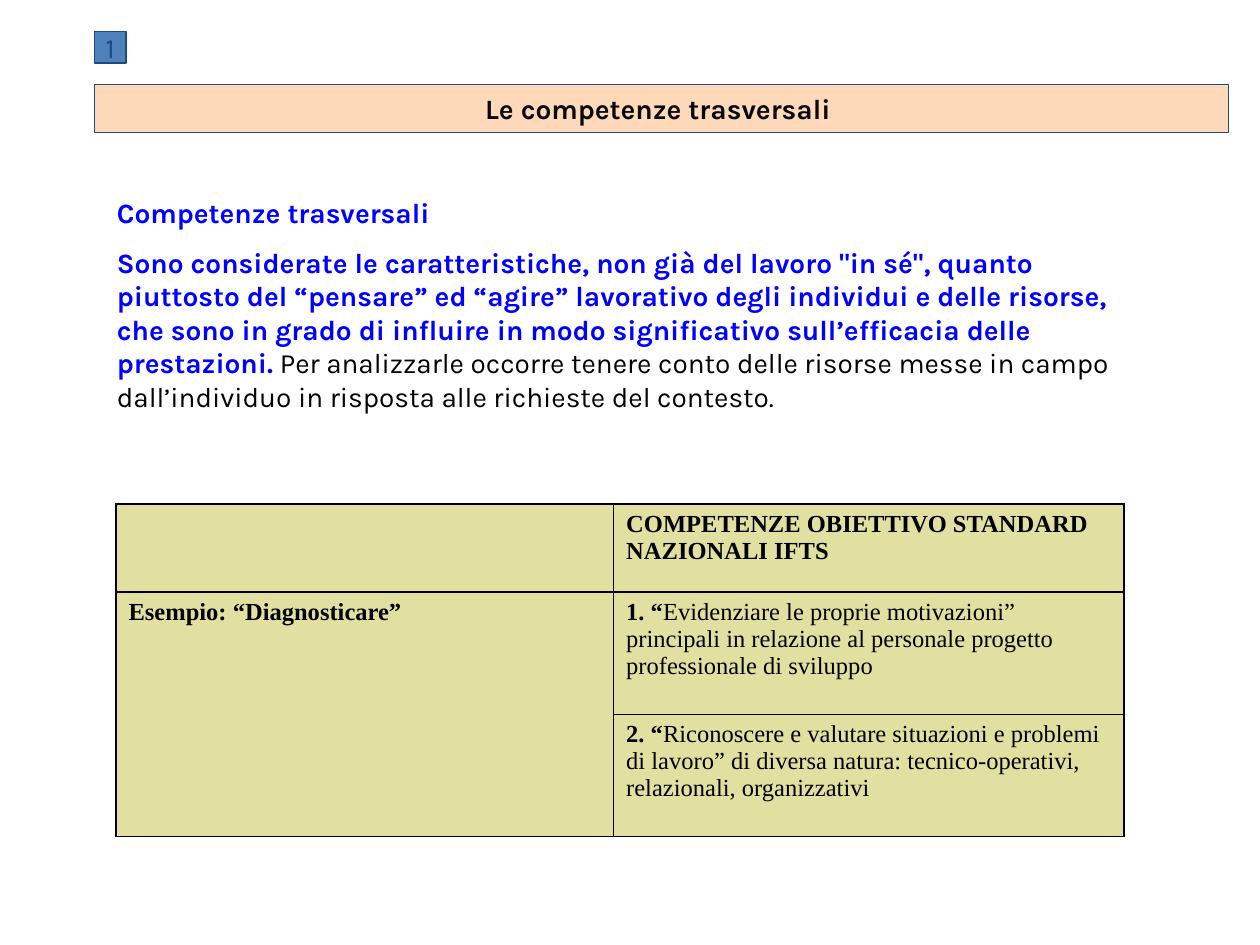
import pptx
import pptx.util
import pptx.dml.color
import pptx.enum.shapes
import pptx.enum.text
import pptx.oxml.ns
import lxml.etree

WIDE, HIGH = 10, 7.5
SANS, SERIF = "Karla", "Times New Roman"
NAVY, BLUE, BLACK, SAND = "1F497D", "0000FF", "000000", "E2E0A0"
ALIGN = pptx.enum.text.PP_ALIGN
INCH = pptx.util.Inches


def paint(hue):
    return pptx.dml.color.RGBColor.from_string(hue)


def write(para, runs, font, size, align=ALIGN.LEFT):
    """Add runs given as (text, colour, bold)."""
    para.alignment = align
    for text, hue, bold in runs:
        run = para.add_run()
        run.text = text
        run.font.name = font
        run.font.size = pptx.util.Pt(size)
        run.font.bold = bold
        run.font.color.rgb = paint(hue)


def panel(slide, box, fill, run, wrap=True):
    kind = pptx.enum.shapes.MSO_SHAPE.RECTANGLE
    shape = slide.shapes.add_shape(kind, *map(INCH, box))
    shape.shadow.inherit = False
    shape.fill.solid()
    shape.fill.fore_color.rgb = paint(fill)
    shape.line.color.rgb = paint(NAVY)
    shape.line.width = pptx.util.Pt(0.75)
    frame = shape.text_frame
    frame.word_wrap = wrap
    frame.vertical_anchor = pptx.enum.text.MSO_ANCHOR.MIDDLE
    write(frame.paragraphs[0], [run], SANS, 16, ALIGN.CENTER)


def prose(slide, box, paras, gap):
    frame = slide.shapes.add_textbox(*map(INCH, box)).text_frame
    frame.word_wrap = True
    for i, runs in enumerate(paras):
        para = frame.add_paragraph() if i else frame.paragraphs[0]
        para.space_before = pptx.util.Pt(gap if i else 0)
        write(para, runs, SANS, 16)


def border(cell):
    props = cell._tc.get_or_add_tcPr()
    for side in "LRTB":
        name = pptx.oxml.ns.qn("a:ln" + side)
        line = lxml.etree.SubElement(props, name, w=str(pptx.util.Pt(1)))
        fill = lxml.etree.SubElement(line, pptx.oxml.ns.qn("a:solidFill"))
        lxml.etree.SubElement(fill, pptx.oxml.ns.qn("a:srgbClr"), val=BLACK)


def grid(slide, left, top, cols, rows, texts):
    area = map(INCH, (left, top, sum(cols), sum(rows)))
    table = slide.shapes.add_table(len(rows), len(cols), *area).table
    for col, size in zip(table.columns, cols):
        col.width = INCH(size)
    for row, size in zip(table.rows, rows):
        row.height = INCH(size)
    for r in range(len(rows)):
        for c in range(len(cols)):
            cell = table.cell(r, c)
            border(cell)
            cell.fill.solid()
            cell.fill.fore_color.rgb = paint(SAND)
            write(cell.text_frame.paragraphs[0], texts.get((r, c), []), SERIF, 14)
    return table


def main():
    deck = pptx.Presentation()
    deck.slide_width, deck.slide_height = INCH(WIDE), INCH(HIGH)
    slide = deck.slides.add_slide(deck.slide_layouts[6])

    prose(slide, (0.83, 1.5, 8.17, 1.84), [
        [("Competenze trasversali", BLUE, True)],
        [("Sono considerate le caratteristiche, non già del lavoro \"in sé\", "
          "quanto piuttosto del “pensare” ed “agire” lavorativo degli individui "
          "e delle risorse, che sono in grado di influire in modo significativo "
          "sull’efficacia delle prestazioni.", BLUE, True),
         (" Per analizzarle occorre tenere conto delle risorse messe in campo "
          "dall’individuo in risposta alle richieste del contesto.", BLACK, False)],
    ], 9.4)

    table = grid(slide, 0.92, 4, (3.95, 4.05), (0.7, 0.97, 0.97), {
        (0, 1): [("COMPETENZE OBIETTIVO STANDARD NAZIONALI IFTS", BLACK, True)],
        (1, 0): [("Esempio: “Diagnosticare”", BLACK, True)],
        (1, 1): [("1. “", BLACK, True),
                 ("Evidenziare le proprie motivazioni” principali in relazione "
                  "al personale progetto professionale di sviluppo", BLACK, False)],
        (2, 1): [("2. “", BLACK, True),
                 ("Riconoscere e valutare situazioni e problemi di lavoro” di "
                  "diversa natura: tecnico-operativi, relazionali, organizzativi",
                  BLACK, False)],
    })
    table.cell(1, 0).merge(table.cell(2, 0))
    table.cell(1, 0).text_frame.paragraphs[0].alignment = ALIGN.JUSTIFY

    edge = 0.075 * WIDE
    panel(slide, (edge, 0.25, 0.25, 0.25), "4F81BD", ("1", NAVY, False), False)
    panel(slide, (edge, 0.67, 0.9 * WIDE, 0.38), "FDD9B9",
          ("Le competenze trasversali ", "08080C", True))
    deck.save("out.pptx")


if __name__ == "__main__":
    main()
